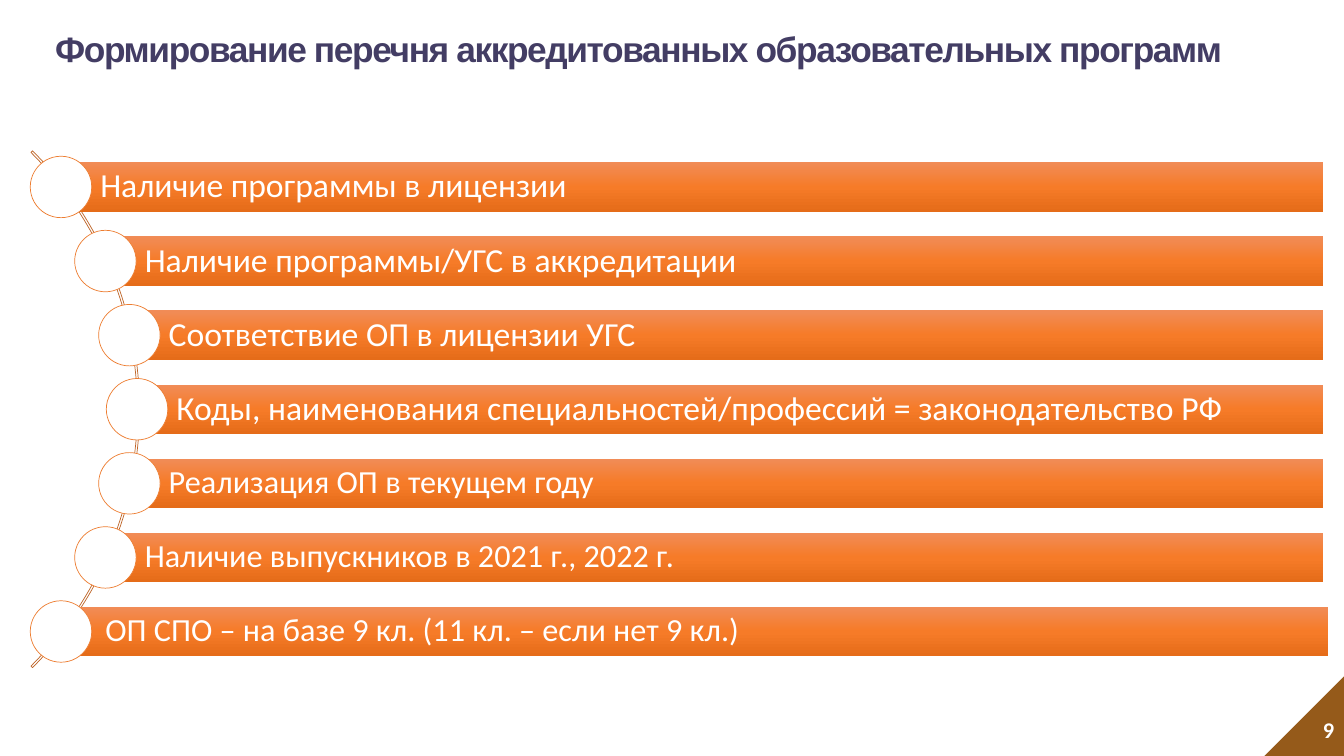
from copy import deepcopy
from dataclasses import dataclass
from math import sqrt

from pptx import Presentation
from pptx.dml.color import RGBColor
from pptx.enum.shapes import MSO_SHAPE
from pptx.enum.text import MSO_ANCHOR, PP_ALIGN
from pptx.oxml.ns import qn
from pptx.util import Emu, Pt

RECTANGLE = MSO_SHAPE.RECTANGLE
ELLIPSE = MSO_SHAPE.OVAL
BLOCK_ARC = MSO_SHAPE.BLOCK_ARC
RIGHT_TRIANGLE = MSO_SHAPE.RIGHT_TRIANGLE
MIDDLE = MSO_ANCHOR.MIDDLE
LEFT, CENTER, RIGHT = PP_ALIGN.LEFT, PP_ALIGN.CENTER, PP_ALIGN.RIGHT

EMU_PER_PX = 9144
SLIDE_WIDTH, SLIDE_HEIGHT = 1333, 750


@dataclass(frozen=True)
class Theme:
    title_font: str = "Arial"
    body_font: str = "Calibri"
    title: str = "433D64"
    light: str = "FFFFFF"
    corner: str = "955A1A"
    arc_line: str = "BE6427"
    circle_line: str = "ED7D31"
    bar_stops: tuple = ((0, "F18C57"), (0.5, "F67B28"), (1, "E56C19"))
    title_size: float = 25.2
    step_size: int = 24
    small_step_size: int = 23
    number_size: int = 16
    line_width: float = 0.5


THEME = Theme()

TITLE = "Формирование перечня аккредитованных образовательных программ"
STEPS = [
    ("Наличие программы в лицензии", THEME.step_size, 0),
    ("Наличие программы/УГС в аккредитации", THEME.step_size, 0),
    ("Соответствие ОП в лицензии УГС", THEME.step_size, 0),
    ("Коды, наименования специальностей/профессий = законодательство РФ", THEME.step_size, 0),
    ("Реализация ОП в текущем году", THEME.small_step_size, 0),
    ("Наличие выпускников в 2021 г., 2022 г.", THEME.small_step_size, 0),
    ("ОП СПО – на базе 9 кл. (11 кл. – если нет 9 кл.)", THEME.small_step_size, 5),
]


def px(length):
    return Emu(round(length * EMU_PER_PX))


def color(value):
    return RGBColor.from_string(value)


def add_shape(slide, kind, box, fill=None, line=None):
    shape = slide.shapes.add_shape(kind, *map(px, box))
    shape.shadow.inherit = False
    if fill:
        shape.fill.solid()
        shape.fill.fore_color.rgb = color(fill)
    else:
        shape.fill.background()
    if line:
        shape.line.color.rgb = color(line)
        shape.line.width = Pt(THEME.line_width)
    else:
        shape.line.fill.background()
    return shape


def fill_bar(bar):
    bar.fill.gradient()
    bar.fill.gradient_angle = 270
    stop_list = bar.fill.gradient_stops
    first = bar._element.spPr.find(".//" + qn("a:gs"))
    first.addnext(deepcopy(first))
    stop_list = bar.fill.gradient_stops
    for stop, (position, value) in zip(stop_list, THEME.bar_stops):
        stop.position = position
        stop.color.rgb = color(value)


def write(shape, text, font, size, value, align, bold=False, insets=(10, 5, 10, 5)):
    frame = shape.text_frame
    frame.word_wrap = True
    frame.vertical_anchor = MIDDLE
    frame.margin_left, frame.margin_top, frame.margin_right, frame.margin_bottom = map(px, insets)
    paragraph = frame.paragraphs[0]
    paragraph.alignment = align
    paragraph.line_spacing = 0.9
    run = paragraph.add_run()
    run.text = text
    run.font.name = font
    run.font.size = Pt(size)
    run.font.bold = bold
    run.font.color.rgb = color(value)
    return run


def add_title(slide, box):
    title = slide.shapes.add_textbox(*map(px, box))
    run = write(title, TITLE, THEME.title_font, THEME.title_size, THEME.title, CENTER, bold=True)
    run.font._element.set("spc", "-100")


def add_corner(slide, box, number):
    left, top, width, height = box
    triangle = add_shape(slide, RIGHT_TRIANGLE, box, THEME.corner)
    triangle.rotation = 270
    label_box = (left + width - 300, top + 34, 300, 40)
    label = slide.shapes.add_textbox(*map(px, label_box))
    write(label, number, THEME.body_font, THEME.number_size, THEME.light, RIGHT, bold=True)


def add_steps(slide, box):
    left, top, width, height = box
    bar_height, circle, arc_size, radius = 49, 61, 725, 360
    pitch = (height - circle) / (len(STEPS) - 1)
    middle = top + height / 2
    reach = (height - circle) / 2
    arc_center = left + circle / 2 - sqrt(radius ** 2 - reach ** 2)

    arc_box = (arc_center - arc_size / 2, middle - arc_size / 2, arc_size, arc_size)
    arc = add_shape(slide, BLOCK_ARC, arc_box, line=THEME.arc_line)
    for index, adjustment in enumerate((189, 27, 0.003)):
        arc.adjustments[index] = adjustment

    for row, (text, size, shift) in enumerate(STEPS):
        center_y = top + circle / 2 + row * pitch
        center_x = arc_center + sqrt(radius ** 2 - (center_y - middle) ** 2)
        bar_box = (center_x + shift, center_y - bar_height / 2, left + width - center_x, bar_height)
        bar = add_shape(slide, RECTANGLE, bar_box)
        fill_bar(bar)
        write(bar, text, THEME.body_font, size, THEME.light, LEFT, insets=(39, 6, 6, 6))
        circle_box = (center_x - circle / 2, center_y - circle / 2, circle, circle)
        add_shape(slide, ELLIPSE, circle_box, THEME.light, THEME.circle_line)


def main():
    presentation = Presentation()
    presentation.slide_width = px(SLIDE_WIDTH)
    presentation.slide_height = px(SLIDE_HEIGHT)
    slide = presentation.slides.add_slide(presentation.slide_layouts[6])
    add_corner(slide, (1254, 671, 79, 79), "9")
    add_title(slide, (19, 15, 1229, 72))
    add_steps(slide, (30, 155, 1282, 502))
    presentation.save("out.pptx")


if __name__ == "__main__":
    main()
